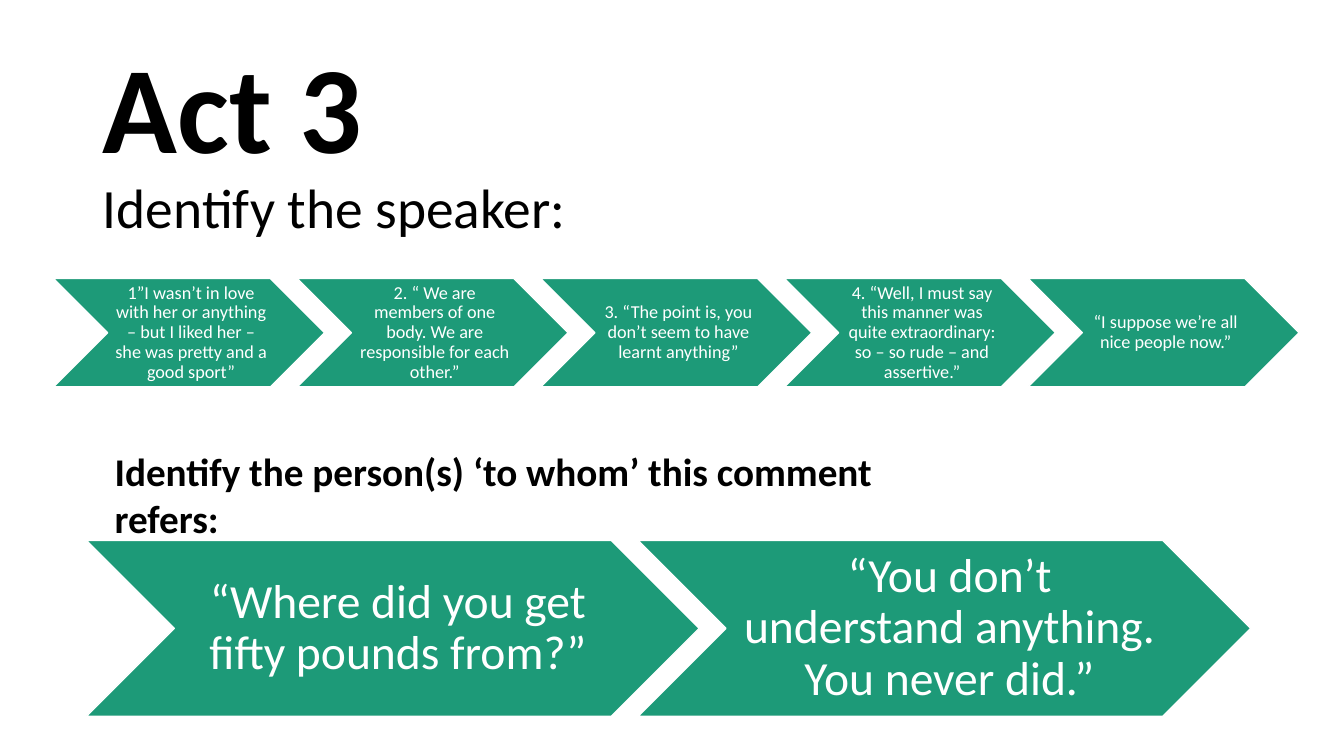
from pptx import Presentation
from pptx.dml.color import RGBColor
from pptx.enum.shapes import MSO_SHAPE
from pptx.enum.text import MSO_ANCHOR, MSO_AUTO_SIZE, PP_ALIGN
from pptx.util import Cm, Pt

CHEVRON = MSO_SHAPE.CHEVRON
MIDDLE, TOP = MSO_ANCHOR.MIDDLE, MSO_ANCHOR.TOP
LEFT, CENTER = PP_ALIGN.LEFT, PP_ALIGN.CENTER
GROW, FIXED = MSO_AUTO_SIZE.SHAPE_TO_FIT_TEXT, MSO_AUTO_SIZE.NONE
TITLE_ONLY = 5

FONT = "Calibri"
GREEN, WHITE, BLACK = "1D9A78", "FFFFFF", "000000"

SPEAKER_QUOTES = [
    "1”I wasn’t in love with her or anything – but I liked her – she was pretty and a good sport”",
    "2. “ We are members of one body. We are responsible for each other.”",
    "3. “The point is, you don’t seem to have learnt anything”",
    "4. “Well, I must say this manner was quite extraordinary: so – so rude – and assertive.”",
    "“I suppose we’re all nice people now.”",
]
PERSON_QUOTES = [
    "“Where did you get fifty pounds from?”",
    "“You don’t understand anything. You never did.”",
]


def color(value):
    return RGBColor.from_string(value)


def write(para, text, size, ink=BLACK, bold=False, align=LEFT, spacing=1.0):
    para.alignment = align
    para.line_spacing = spacing
    para.space_before = Pt(0)
    span = para.add_run()
    span.text = text
    span.font.name = FONT
    span.font.size = Pt(size)
    span.font.bold = bold
    span.font.color.rgb = color(ink)


def set_frame(frame, anchor, fit=FIXED):
    frame.word_wrap = True
    frame.auto_size = fit
    frame.vertical_anchor = anchor


def add_title(page):
    title = page.shapes.title
    title.left, title.top = Cm(2.34), Cm(1.02)
    title.width, title.height = Cm(29.21), Cm(5.21)
    frame = title.text_frame
    set_frame(frame, MIDDLE)
    write(frame.paragraphs[0], "Act 3", 88.2, bold=True, spacing=0.9)
    write(frame.add_paragraph(), "Identify the speaker:", 39.6, spacing=0.9)


def add_label(page, text, left, top, width, height):
    box = page.shapes.add_textbox(Cm(left), Cm(top), Cm(width), Cm(height))
    set_frame(box.text_frame, TOP, GROW)
    write(box.text_frame.paragraphs[0], text, 28, bold=True)


def add_chevron_row(page, quotes, left, top, width, height, pitch, size, inset):
    for index, quote in enumerate(quotes):
        chevron = page.shapes.add_shape(
            CHEVRON, Cm(left + index * pitch), Cm(top), Cm(width), Cm(height))
        chevron.shadow.inherit = False
        chevron.fill.solid()
        chevron.fill.fore_color.rgb = color(GREEN)
        chevron.line.color.rgb = color(WHITE)
        chevron.line.width = Pt(1)
        frame = chevron.text_frame
        set_frame(frame, MIDDLE)
        frame.margin_left = Cm(inset * 3)
        frame.margin_right = frame.margin_top = frame.margin_bottom = Cm(inset)
        write(frame.paragraphs[0], quote, size, ink=WHITE, align=CENTER, spacing=0.9)


def main():
    deck = Presentation()
    deck.slide_width, deck.slide_height = Cm(33.87), Cm(19.05)
    page = deck.slides.add_slide(deck.slide_layouts[TITLE_ONLY])

    # Heading and the quotes to match with a speaker
    add_title(page)
    add_chevron_row(page, SPEAKER_QUOTES, left=1.35, top=7.02, width=6.83,
                    height=2.73, pitch=6.14, size=13, inset=0.05)

    # Quotes to match with the person they refer to
    add_chevron_row(page, PERSON_QUOTES, left=2.18, top=13.62, width=15.44,
                    height=4.43, pitch=13.9, size=34, inset=0.13)
    add_label(page, "Identify the person(s) ‘to whom’ this comment refers:",
              left=2.64, top=11.15, width=22.12, height=1.45)

    deck.save("out.pptx")


if __name__ == "__main__":
    main()
